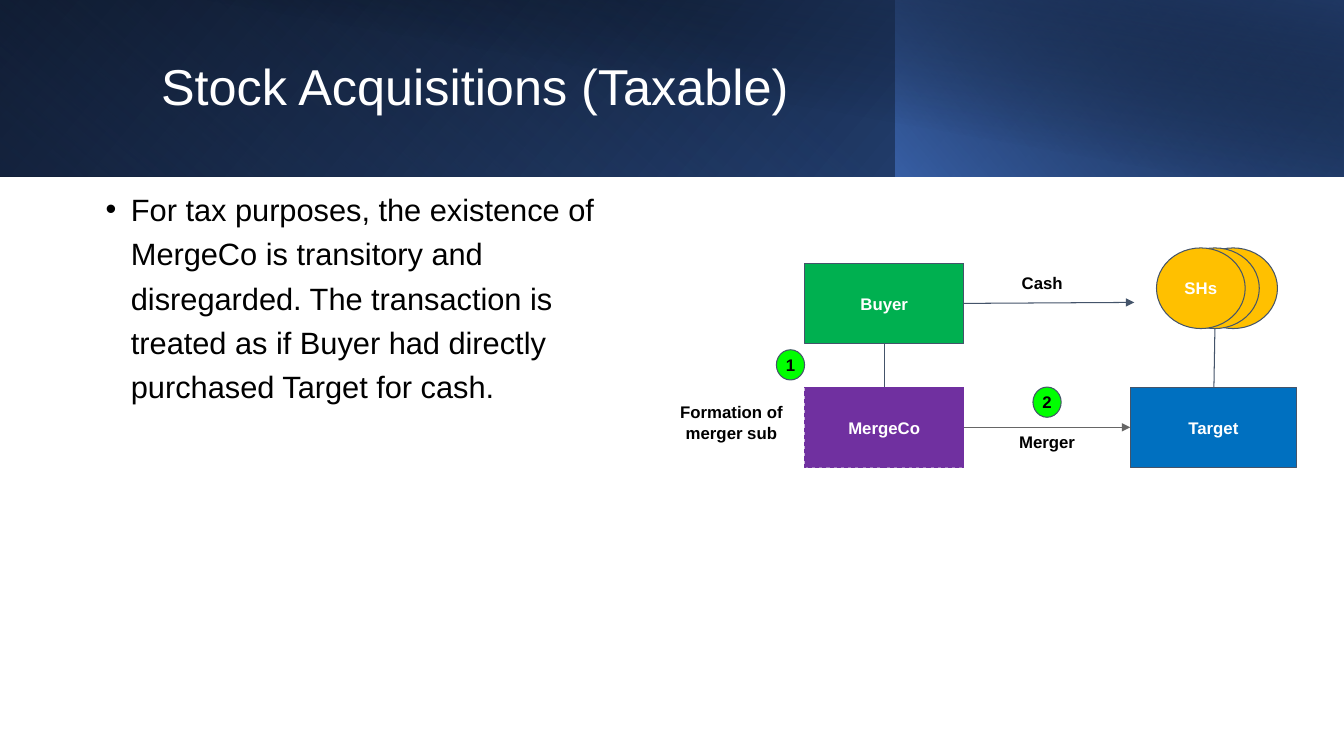
from lxml.etree import SubElement
from pptx import Presentation
from pptx.dml.color import RGBColor
from pptx.enum.dml import MSO_LINE
from pptx.enum.shapes import MSO_CONNECTOR, MSO_SHAPE
from pptx.enum.text import MSO_ANCHOR, PP_ALIGN
from pptx.oxml import parse_xml
from pptx.oxml.ns import nsdecls, qn
from pptx.util import Inches, Pt

WIDTH, HEIGHT = 13.33, 7.5
OUTLINE = "44546A"
WHITE, BLACK = "FFFFFF", "000000"


def color(value):
    return RGBColor.from_string(value)


def inches(*lengths):
    return [Inches(length) for length in lengths]


def write(shape, text, size=12, ink=BLACK, bold=True, align=PP_ALIGN.CENTER,
          anchor=MSO_ANCHOR.TOP, insets=(0.1, 0.1)):
    frame = shape.text_frame
    frame.word_wrap = True
    frame.vertical_anchor = anchor
    frame.margin_left = frame.margin_right = Inches(insets[0])
    frame.margin_top = frame.margin_bottom = Inches(insets[1])
    paragraph = frame.paragraphs[0]
    paragraph.alignment = align
    run = paragraph.add_run()
    run.text = text
    font = run.font
    font.name, font.size, font.bold = "Arial", Pt(size), bold
    font.color.rgb = color(ink)
    return paragraph


def add_label(slide, box, text, **style):
    return write(slide.shapes.add_textbox(*inches(*box)), text, **style)


def add_node(slide, kind, box, fill, text=None, ink=WHITE, line=OUTLINE,
             dash=None, inset=0.1):
    node = slide.shapes.add_shape(kind, *inches(*box))
    node.shadow.inherit = False
    node.fill.solid()
    node.fill.fore_color.rgb = color(fill)
    node.line.color.rgb = color(line)
    node.line.width = Pt(0.75)
    if dash:
        node.line.dash_style = dash
    if text:
        write(node, text, ink=ink, anchor=MSO_ANCHOR.MIDDLE, insets=(inset, inset))


def add_link(slide, start, end, line=OUTLINE, arrow=False):
    link = slide.shapes.add_connector(MSO_CONNECTOR.STRAIGHT, *inches(*start, *end))
    link.line.color.rgb = color(line)
    link.line.width = Pt(0.75)
    if arrow:
        SubElement(link.line._get_or_add_ln(), qn("a:tailEnd"), type="triangle")
    SubElement(link._element.spPr, qn("a:effectLst"))


def add_gradient(slide, box, angle, stops):
    """Each stop is (position %, colour, opacity %)."""
    panel = slide.shapes.add_shape(MSO_SHAPE.RECTANGLE, *inches(*box))
    panel.shadow.inherit = False
    panel.line.fill.background()
    marks = "".join(
        f'<a:gs pos="{place * 1000}"><a:srgbClr val="{tint}">'
        f'<a:alpha val="{opacity * 1000}"/></a:srgbClr></a:gs>'
        for place, tint, opacity in stops)
    gradient = parse_xml(
        f'<a:gradFill {nsdecls("a")} rotWithShape="1"><a:gsLst>{marks}</a:gsLst>'
        f'<a:lin ang="{angle * 60000}" scaled="0"/></a:gradFill>')
    panel._element.spPr.find(qn("a:prstGeom")).addnext(gradient)


def add_banner(slide, left, top, width, height):
    split = width * 2 / 3
    margin = 0.5
    add_gradient(slide, (left, top, width, height), 40,
                 [(0, BLACK, 100), (100, "2F5597", 100)])
    add_gradient(slide, (left, top, split, height), 130,
                 [(20, "4472C4", 0), (100, "203864", 55)])
    add_gradient(slide, (left + split, top, width - split, height), 320,
                 [(0, "4472C4", 66), (100, BLACK, 30)])
    add_gradient(slide, (left + margin, top, width - margin, height), 280,
                 [(50, BLACK, 0), (99, "203864", 52)])
    title = add_label(slide, (left + 1.5, top + 0.32, 10.82, 1.13),
                      "Stock Acquisitions (Taxable)", size=36, ink=WHITE, bold=False,
                      align=PP_ALIGN.LEFT, anchor=MSO_ANCHOR.MIDDLE, insets=(0.1, 0.05))
    title.line_spacing = 0.9


def add_body(slide, *box):
    body = add_label(
        slide, box,
        "For tax purposes, the existence of MergeCo is transitory and disregarded. "
        "The transaction is treated as if Buyer had directly purchased Target for cash.",
        size=22, bold=False, align=PP_ALIGN.LEFT, insets=(0.1, 0.05))
    body.line_spacing = 1.2
    body.space_before = Pt(10)
    properties = body._p.get_or_add_pPr()
    properties.set("marL", str(Inches(0.25)))
    properties.set("indent", str(-Inches(0.25)))
    SubElement(properties, qn("a:buFont"), typeface="Arial")
    SubElement(properties, qn("a:buChar"), char="•")


def add_diagram(slide, left, top, width, height):
    # Columns: captions, acquirer side, target side
    caption_width, acquirer_width, target_width, node_height = 1.45, 1.58, 1.65, 0.8
    acquirer = left + caption_width
    acquirer_right = acquirer + acquirer_width
    target = left + width - target_width
    upper, lower = top + 0.15, top + height - node_height
    middle = lower + node_height / 2
    acquirer_center = acquirer + acquirer_width / 2
    gap_center = (acquirer_right + target) / 2

    # Shareholders, back to front
    for offset, name in ((0.58, None), (0.4, None), (0.26, "SHs")):
        add_node(slide, MSO_SHAPE.FLOWCHART_CONNECTOR,
                 (target + offset, top, 0.88, node_height), "FFC000", name)

    # Companies
    for column, row, span, fill, name, line, dash in (
            (acquirer, upper, acquirer_width, "00B050", "Buyer", OUTLINE, None),
            (acquirer, lower, acquirer_width, "7030A0", "MergeCo", "7030A0", MSO_LINE.DASH),
            (target, lower, target_width, "0070C0", "Target", OUTLINE, None)):
        add_node(slide, MSO_SHAPE.RECTANGLE, (column, row, span, node_height),
                 fill, name, line=line, dash=dash)

    # Ownership lines and flows
    add_link(slide, (acquirer_center, upper + node_height), (acquirer_center, lower))
    add_link(slide, (target + 0.84, top + node_height), (target + 0.83, lower))
    add_link(slide, (acquirer_right, middle), (target, middle), "666666", arrow=True)
    add_link(slide, (acquirer_right, upper + 0.4), (target + 0.04, upper + 0.39), arrow=True)

    # Captions
    add_label(slide, (left, lower + 0.05, caption_width, 0.3), "Formation of merger sub")
    add_label(slide, (gap_center - caption_width / 2, lower + 0.34, caption_width, 0.3),
              "Merger")
    add_label(slide, (gap_center - 0.35, upper, 0.79, 0.2), "Cash", align=PP_ALIGN.LEFT)

    # Step numbers
    badge_width, badge_height = 0.28, 0.3
    for step, x, y in (("1", acquirer - badge_width, lower - 0.37),
                       ("2", gap_center - badge_width / 2, lower)):
        add_node(slide, MSO_SHAPE.OVAL, (x, y, badge_width, badge_height),
                 "00FF00", step, ink=BLACK, inset=0)


def main():
    deck = Presentation()
    deck.slide_width, deck.slide_height = inches(WIDTH, HEIGHT)
    slide = deck.slides.add_slide(deck.slide_layouts[6])
    banner_height = 1.75
    add_banner(slide, 0, 0, WIDTH, banner_height)
    add_body(slide, 0.95, 1.77, 5.45, 5.73)
    add_diagram(slide, 6.53, 2.46, 6.33, 2.18)
    deck.save("out.pptx")


if __name__ == "__main__":
    main()
